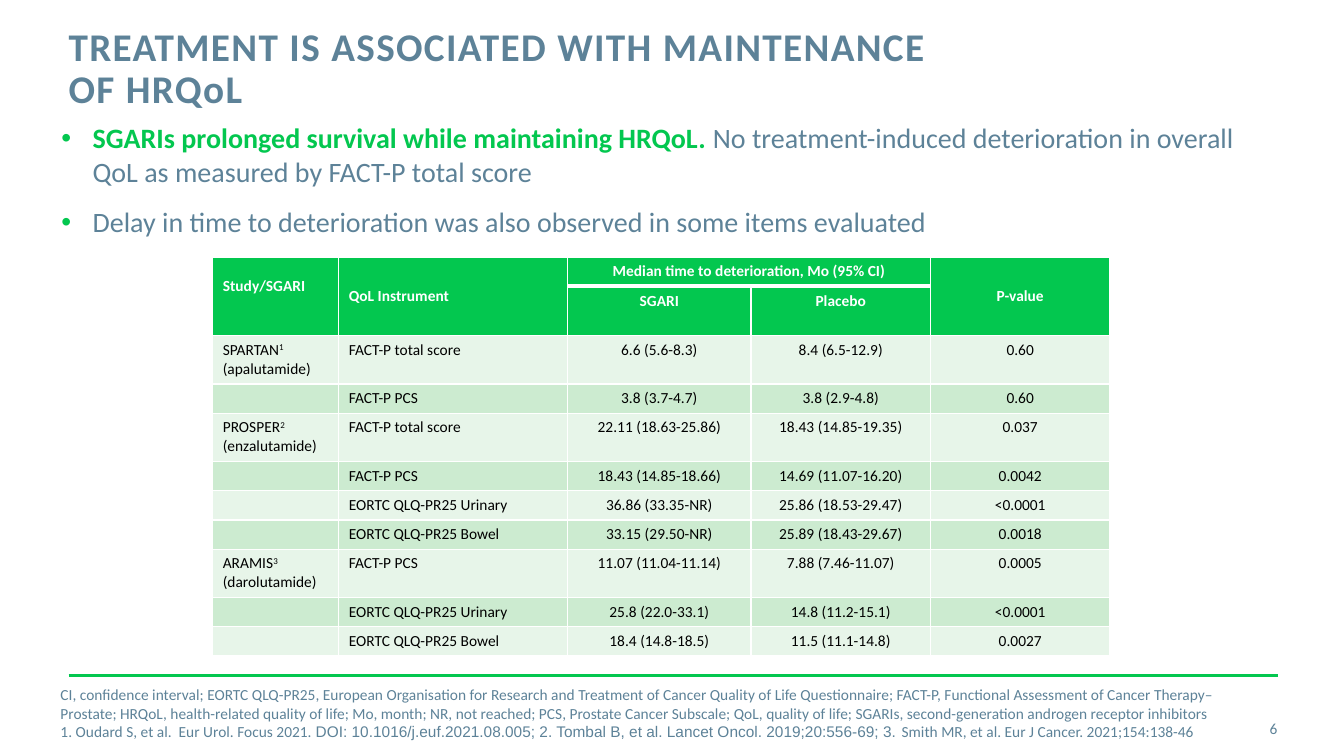
from lxml import etree
from pptx import Presentation, util as u
from pptx.dml.color import RGBColor
from pptx.enum import shapes, text
from pptx.oxml.ns import qn

HEX = {"green": "03C74F", "slate": "5D8298", "white": "FFFFFF",
       "black": "000000", "pale": "E7F5E9", "mint": "CCEBD0"}
LEFT, MID, RIGHT = text.PP_ALIGN.LEFT, text.PP_ALIGN.CENTER, text.PP_ALIGN.RIGHT
TOP, CENTER = text.MSO_ANCHOR.TOP, text.MSO_ANCHOR.MIDDLE

WIDTHS = [1.25, 2.27, 1.82, 1.78, 1.78]
TALL, SHORT, HEAD = 0.48, 0.29, [0.29, 0.46]
# Study (name, note number, drug) or None, instrument, SGARI, placebo, P-value
ROWS = [
    (("SPARTAN", "1", "(apalutamide)"), "FACT-P total score",
     "6.6 (5.6-8.3)", "8.4 (6.5-12.9)", "0.60"),
    (None, "FACT-P PCS", "3.8 (3.7-4.7)", "3.8 (2.9-4.8)", "0.60"),
    (("PROSPER", "2", "(enzalutamide)"), "FACT-P total score",
     "22.11 (18.63-25.86)", "18.43 (14.85-19.35)", "0.037"),
    (None, "FACT-P PCS", "18.43 (14.85-18.66)", "14.69 (11.07-16.20)", "0.0042"),
    (None, "EORTC QLQ-PR25 Urinary", "36.86 (33.35-NR)",
     "25.86 (18.53-29.47)", "<0.0001"),
    (None, "EORTC QLQ-PR25 Bowel", "33.15 (29.50-NR)",
     "25.89 (18.43-29.67)", "0.0018"),
    (("ARAMIS", "3", "(darolutamide)"), "FACT-P PCS",
     "11.07 (11.04-11.14)", "7.88 (7.46-11.07)", "0.0005"),
    (None, "EORTC QLQ-PR25 Urinary", "25.8 (22.0-33.1)",
     "14.8 (11.2-15.1)", "<0.0001"),
    (None, "EORTC QLQ-PR25 Bowel", "18.4 (14.8-18.5)",
     "11.5 (11.1-14.8)", "0.0027"),
]
HEADS = [  # row, column, last row, last column, label, anchor
    (0, 0, 1, 0, "Study/SGARI", CENTER),
    (0, 1, 1, 1, "QoL Instrument", CENTER),
    (0, 2, 0, 3, "Median time to deterioration, Mo (95% CI)", TOP),
    (0, 4, 1, 4, "P-value", CENTER),
    (1, 2, 1, 2, "SGARI", TOP),
    (1, 3, 1, 3, "Placebo", TOP),
]
TERMS = ("CI, confidence interval; EORTC QLQ-PR25, European Organisation for Research "
         "and Treatment of Cancer Quality of Life Questionnaire; FACT-P, Functional "
         "Assessment of Cancer Therapy–Prostate; HRQoL, health-related quality of life; "
         "Mo, month; NR, not reached; PCS, Prostate Cancer Subscale; QoL, quality of "
         "life; SGARIs, second-generation androgen receptor inhibitors")
CITES = [
    ("1. Oudard S, et al.  Eur Urol. Focus 2021. ", "Calibri"),
    ("DOI: 10.1016/j.euf.2021.08.005; 2. Tombal B, et al. Lancet Oncol. "
     "2019;20:556-69; 3. ", "Arial"),
    ("Smith MR, et al. Eur J Cancer. 2021;154:138-46", "Calibri"),
]


def color(name):
    return RGBColor.from_string(HEX[name])


def apply(item, **values):
    for key, value in values.items():
        setattr(item, key, value)


def write(para, words, size, hue, bold=False, face="Calibri"):
    run = para.add_run()
    run.text = words
    apply(run.font, size=u.Pt(size), bold=bold, name=face)
    run.font.color.rgb = color(hue)
    return run


def frame(shape, box, anchor=TOP, inset=(0, 0)):
    """Place a shape and set up its text area."""
    apply(shape, **dict(zip(("left", "top", "width", "height"), map(u.Inches, box))))
    side, edge = map(u.Inches, inset)
    apply(shape.text_frame, word_wrap=True, auto_size=text.MSO_AUTO_SIZE.NONE,
          vertical_anchor=anchor, margin_left=side, margin_right=side,
          margin_top=edge, margin_bottom=edge)
    return shape.text_frame


def add_box(slide, box, **style):
    return frame(slide.shapes.add_textbox(0, 0, 0, 0), box, **style)


def add_title(slide, box):
    para = frame(slide.shapes.title, box).paragraphs[0]
    apply(para, alignment=LEFT, line_spacing=u.Pt(30))
    for i, words in enumerate(("TREATMENT IS ASSOCIATED WITH MAINTENANCE ", "OF HRQoL")):
        if i:
            para.add_line_break()
        run = write(para, words, 28, "slate", True)
        run.font._element.set("spc", "100")


def add_points(slide, box):
    area = add_box(slide, box, inset=(0.1, 0.05))
    points = [
        [("SGARIs prolonged survival while maintaining HRQoL. ", "green", True),
         ("No treatment-induced deterioration in overall QoL as measured by "
          "FACT-P total score", "slate", False)],
        [("Delay in time to deterioration was also observed in some items evaluated",
          "slate", False)],
    ]
    for i, parts in enumerate(points):
        para = area.add_paragraph() if i else area.paragraphs[0]
        props = para._p.get_or_add_pPr()
        props.set("marL", str(u.Inches(0.31)))
        props.set("indent", str(-u.Inches(0.31)))
        tint = etree.SubElement(props, qn("a:buClr"))
        etree.SubElement(tint, qn("a:srgbClr"), val=HEX["green"])
        etree.SubElement(props, qn("a:buFont"), typeface="Arial")
        etree.SubElement(props, qn("a:buChar"), char="•")
        if i:
            para.space_before = u.Pt(12)
        for words, hue, bold in parts:
            write(para, words, 20, hue, bold)


def style_cell(cell, fill, base=1):
    """White borders and a solid fill."""
    props = cell._tc.get_or_add_tcPr()
    for side, width in (("L", 1), ("R", 1), ("T", 1), ("B", base)):
        line = etree.SubElement(props, qn("a:ln" + side), w=str(u.Pt(width)))
        solid = etree.SubElement(line, qn("a:solidFill"))
        etree.SubElement(solid, qn("a:srgbClr"), val=HEX["white"])
    cell.fill.solid()
    cell.fill.fore_color.rgb = color(fill)


def add_table(slide, left, top):
    highs = HEAD + [TALL if row[0] else SHORT for row in ROWS]
    box = map(u.Inches, (left, top, sum(WIDTHS), sum(highs)))
    table = slide.shapes.add_table(len(highs), len(WIDTHS), *box).table
    for col, width in zip(table.columns, WIDTHS):
        col.width = u.Inches(width)
    for row, high in zip(table.rows, highs):
        row.height = u.Inches(high)

    # Header
    for r in range(2):
        for c in range(len(WIDTHS)):
            style_cell(table.cell(r, c), "green", 3 if r == 0 and c in (2, 3) else 1)
    for r, c, last, end, label, anchor in HEADS:
        cell = table.cell(r, c)
        if (r, c) != (last, end):
            cell.merge(table.cell(last, end))
        cell.vertical_anchor = anchor
        para = cell.text_frame.paragraphs[0]
        para.alignment = MID if c > 1 else LEFT
        write(para, label, 11, "white", True)
    table.cell(0, 0).margin_bottom = u.Inches(0.25)

    # Results
    for r, row in enumerate(ROWS):
        for c, value in enumerate(row):
            cell = table.cell(r + 2, c)
            style_cell(cell, "mint" if r % 2 else "pale")
            para = cell.text_frame.paragraphs[0]
            para.alignment = MID if c > 1 else LEFT
            if value is None:
                etree.SubElement(para._p, qn("a:endParaRPr"), sz="1100")
            elif c == 0:
                study, note, drug = value
                write(para, study, 11, "black")
                mark = write(para, note, 11, "black")
                mark.font._element.set("baseline", "30000")
                write(cell.text_frame.add_paragraph(), drug, 11, "black")
            else:
                write(para, value, 11, "black")


def add_footer(slide, left, top, width):
    rule = slide.shapes.add_connector(
        shapes.MSO_CONNECTOR.STRAIGHT, *map(u.Inches, (left, top, left + width, top)))
    rule.line.color.rgb = color("green")
    rule.line.width = u.Pt(2)
    etree.SubElement(rule._element.spPr, qn("a:effectLst"))

    notes = add_box(slide, (left - 0.08, top + 0.02, 11.82, 0.71), anchor=CENTER)
    write(notes.paragraphs[0], TERMS, 11, "slate")
    cites = notes.add_paragraph()
    for words, face in CITES:
        write(cites, words, 11, "slate", face=face)

    page = add_box(slide, (left + width - 0.87, top + 0.33, 0.86, 0.4), anchor=CENTER)
    page.paragraphs[0].alignment = RIGHT
    write(page.paragraphs[0], "6", 11, "slate")


def main():
    deck = Presentation()
    apply(deck, slide_width=u.Inches(13.33), slide_height=u.Inches(7.5))
    slide = deck.slides.add_slide(deck.slide_layouts[5])
    add_title(slide, (0.68, 0.27, 9.56, 0.88))
    add_points(slide, (0.51, 1.15, 11.99, 1.32))
    add_table(slide, 2.11, 2.55)
    add_footer(slide, 0.68, 6.7, 12)
    deck.save("out.pptx")


if __name__ == "__main__":
    main()
